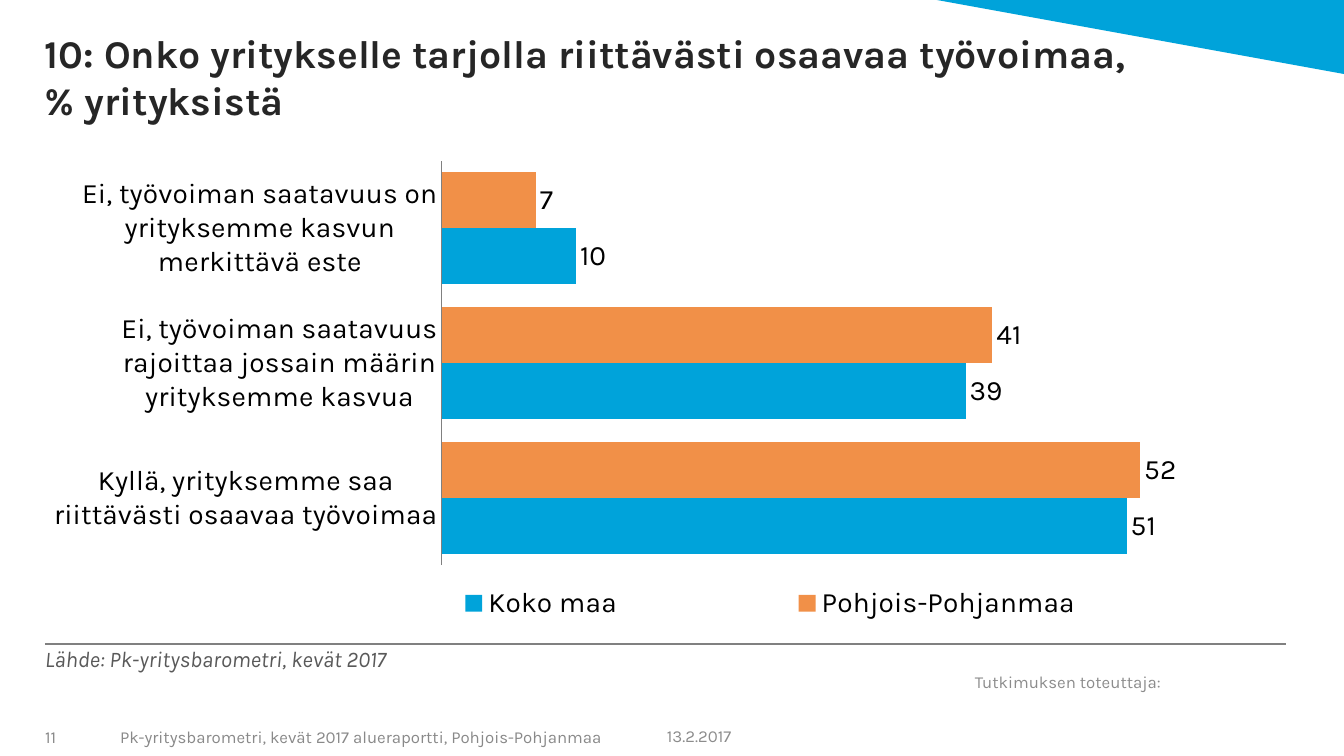
import pptx
import pptx.util
import pptx.chart.data
import pptx.dml.color
import pptx.enum.chart
import pptx.enum.shapes
import pptx.enum.text
import lxml.etree

FONT = "Karla"
HUES = {"blue": "00A3DA", "orange": "F19048", "line": "808080", "title": "262626",
        "source": "595959", "foot": "898989", "note": "8C8C8C", "black": "000000"}
CATS = ["Ei, työvoiman saatavuus on yrityksemme kasvun merkittävä este",
        "Ei, työvoiman saatavuus rajoittaa jossain määrin yrityksemme kasvua",
        "Kyllä, yrityksemme saa riittävästi osaavaa työvoimaa"]
SERIES = [("Pohjois-Pohjanmaa", (7, 41, 52), "orange"),
          ("Koko maa", (10, 39, 51), "blue")]
NONE, PAD, LEFT = (0, 0, 0, 0), (10, 5, 10, 5), (0, 5, 10, 5)
TEXTS = [
    ("Tutkimuksen toteuttaja:", (965, 661, 220, 41), PAD, "MIDDLE", "note", {"size": 12}),
    ("10: Onko yritykselle tarjolla riittävästi osaavaa työvoimaa,\v% yrityksistä",
     (45, 0, 1240, 123), NONE, "BOTTOM", "title", {"size": 28, "bold": True}),
    ("Lähde: Pk-yritysbarometri, kevät 2017", (45, 645, 1070, 43), NONE, "TOP",
     "source", {"size": 16, "italic": True}),
    ("Pk-yritysbarometri, kevät 2017 alueraportti, Pohjois-Pohjanmaa",
     (110, 719, 545, 35), PAD, "MIDDLE", "foot", {"size": 12}),
    ("11", (45, 719, 64, 35), LEFT, "MIDDLE", "foot", {"size": 12}),
    ("13.2.2017", (657, 718, 134, 35), PAD, "MIDDLE", "note", {"size": 12}),
]
AREA = (45, 156, 1240, 476)
PLOT = (0.32, 0.01, 0.65, 0.85)
KEY = (0.2, 0.88, 0.77, 0.12)
SCALE = 914400 / 100.8


def px(*nums):
    return [pptx.util.Emu(round(n * SCALE)) for n in nums]


def hue(name):
    return pptx.dml.color.RGBColor.from_string(HUES[name])


def apply(item, **vals):
    for name, val in vals.items():
        setattr(item, name, val)


def style(font, tone, size, **vals):
    apply(font, name=FONT, size=pptx.util.Pt(size), **vals)
    font.color.rgb = hue(tone)


def paint(fill, tone):
    fill.solid()
    fill.fore_color.rgb = hue(tone)


def place(host, box, inner=False):
    tag = "{http://schemas.openxmlformats.org/drawingml/2006/chart}"
    for old in host.findall(tag + "layout"):
        host.remove(old)
    lay = lxml.etree.Element(tag + "layout")
    man = lxml.etree.SubElement(lay, tag + "manualLayout")
    rules = [("layoutTarget", "inner")] if inner else []
    rules += [("xMode", "edge"), ("yMode", "edge"), *zip("xywh", box)]
    for name, val in rules:
        lxml.etree.SubElement(man, tag + name, val=str(val))
    prev = host.find(tag + "legendPos")
    if prev is None:
        host.insert(0, lay)
    else:
        prev.addnext(lay)


def add_text(slide, text, box, pads, anchor, tone, look):
    frame = slide.shapes.add_textbox(*px(*box)).text_frame
    sides = ("margin_left", "margin_top", "margin_right", "margin_bottom")
    apply(frame, word_wrap=True,
          vertical_anchor=getattr(pptx.enum.text.MSO_ANCHOR, anchor),
          **dict(zip(sides, px(*pads))))
    frame.text = text
    for run in frame.paragraphs[0].runs:
        style(run.font, tone, **look)


def add_bars(slide):
    enum = pptx.enum.chart
    data = pptx.chart.data.CategoryChartData()
    data.categories = CATS
    for name, vals, _ in SERIES:
        data.add_series(name, vals)
    chart = slide.shapes.add_chart(
        enum.XL_CHART_TYPE.BAR_CLUSTERED, *px(*AREA), data).chart
    apply(chart, has_title=False, has_legend=True)
    style(chart.font, "black", 20)
    apply(chart.legend, position=enum.XL_LEGEND_POSITION.RIGHT, include_in_layout=False)
    place(chart.legend._element, KEY)

    cat, val = chart.category_axis, chart.value_axis
    apply(cat, reverse_order=True, has_major_gridlines=False,
          major_tick_mark=enum.XL_TICK_MARK.NONE, minor_tick_mark=enum.XL_TICK_MARK.NONE)
    apply(cat.format.line, width=pptx.util.Pt(0.75))
    cat.format.line.color.rgb = hue("line")
    apply(val, visible=False, has_major_gridlines=False,
          minimum_scale=0, maximum_scale=60)

    plot = chart.plots[0]
    apply(plot, gap_width=40, overlap=0, vary_by_categories=False)
    place(chart._chartSpace.chart.plotArea, PLOT, inner=True)
    for bar, (_, _, tone) in zip(plot.series, SERIES):
        paint(bar.format.fill, tone)
        tags = bar.data_labels
        apply(tags, show_value=True, number_format="#,##0", number_format_is_linked=False,
              position=enum.XL_LABEL_POSITION.OUTSIDE_END)
        style(tags.font, "black", 20)


def add_decor(slide):
    enum = pptx.enum.shapes
    wedge = slide.shapes.add_shape(
        enum.MSO_SHAPE.RIGHT_TRIANGLE, *px(937, 0, 407, 74))
    wedge.rotation = 180
    wedge.shadow.inherit = False
    paint(wedge.fill, "blue")
    wedge.line.fill.background()

    rule = slide.shapes.add_connector(
        enum.MSO_CONNECTOR.STRAIGHT, *px(45, 644, 1286, 644))
    rule.line.width = pptx.util.Pt(1.5)
    rule.line.color.rgb = hue("line")
    lxml.etree.SubElement(
        rule._element.spPr,
        "{http://schemas.openxmlformats.org/drawingml/2006/main}effectLst")


def main():
    deck = pptx.Presentation()
    deck.slide_width, deck.slide_height = px(1344, 756)
    slide = deck.slides.add_slide(deck.slide_layouts[6])
    add_decor(slide)
    add_bars(slide)
    for item in TEXTS:
        add_text(slide, *item)
    deck.save("out.pptx")


if __name__ == "__main__":
    main()
